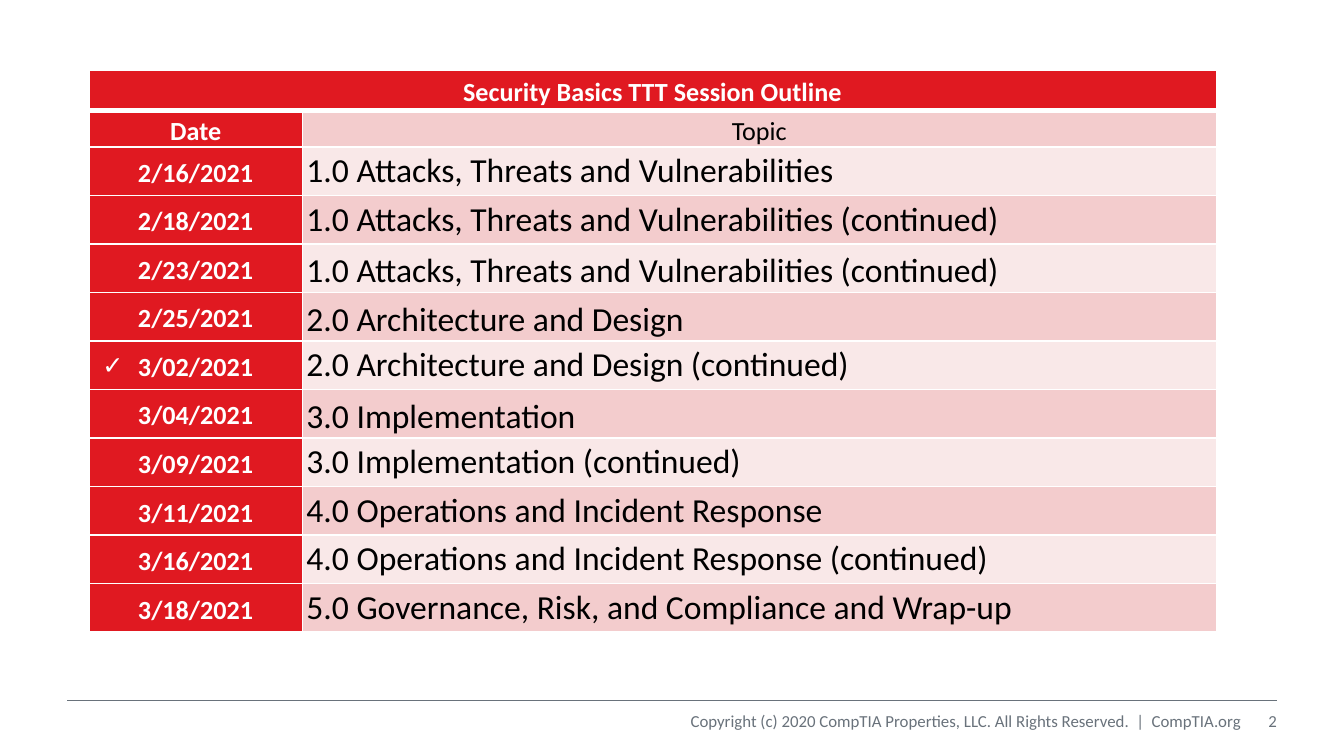
from lxml import etree
from pptx import Presentation
from pptx.dml.color import RGBColor
from pptx.enum.shapes import MSO_CONNECTOR
from pptx.enum.text import MSO_ANCHOR, PP_ALIGN
from pptx.oxml.ns import qn
from pptx.util import Pt

LINE = MSO_CONNECTOR.STRAIGHT
MID, TOP = MSO_ANCHOR.MIDDLE, MSO_ANCHOR.TOP
LEFT, CENTER, RIGHT = PP_ALIGN.LEFT, PP_ALIGN.CENTER, PP_ALIGN.RIGHT
FONT = "Calibri"
COLORS = {"red": "E01921", "rose": "F3CCCD", "pale": "F9E8E8",
          "white": "FFFFFF", "black": "000000", "gray": "69727B"}

# Date, topic, line spacing of the topic
ROWS = [
    ("2/16/2021", "1.0 Attacks, Threats and Vulnerabilities", 1),
    ("2/18/2021", "1.0 Attacks, Threats and Vulnerabilities (continued)", 1),
    ("2/23/2021", "1.0 Attacks, Threats and Vulnerabilities (continued)", 1.15),
    ("2/25/2021", "2.0 Architecture and Design", 1.15),
    ("3/02/2021", "2.0 Architecture and Design (continued)", 1),
    ("3/04/2021", "3.0 Implementation", 1.15),
    ("3/09/2021", "3.0 Implementation (continued)", 1),
    ("3/11/2021", "4.0 Operations and Incident Response", 1),
    ("3/16/2021", "4.0 Operations and Incident Response (continued)", 1),
    ("3/18/2021", "5.0 Governance, Risk, and Compliance and Wrap-up", 1),
]


def rgb(name):
    return RGBColor.from_string(COLORS[name])


def put_text(frame, text, size=14, color="black", bold=False, align=LEFT,
             space=1):
    para = frame.paragraphs[0]
    para.alignment = align
    para.line_spacing = space
    run = para.add_run()
    run.text = text
    font = run.font
    font.name, font.size, font.bold = FONT, Pt(size), bold
    font.color.rgb = rgb(color)


def add_label(slide, text, box, pads, anchor=MID, wrap=True, **form):
    frame = slide.shapes.add_textbox(*map(Pt, box)).text_frame
    frame.margin_left, frame.margin_top, frame.margin_right, \
        frame.margin_bottom = map(Pt, pads)
    frame.vertical_anchor = anchor
    frame.word_wrap = wrap
    put_text(frame, text, **form)


def add_rule(slide, left, right, y):
    rule = slide.shapes.add_connector(LINE, Pt(left), Pt(y), Pt(right), Pt(y))
    rule.line.color.rgb = rgb("gray")
    rule.line.width = Pt(1)
    etree.SubElement(rule._element.spPr, qn("a:effectLst"))


def set_edges(cell, top=1, bottom=1):
    props = cell._tc.get_or_add_tcPr()
    for side, width in zip("LRTB", (1, 1, top, bottom)):
        edge = etree.SubElement(props, qn("a:ln" + side), w=str(Pt(width)))
        fill = etree.SubElement(edge, qn("a:solidFill"))
        etree.SubElement(fill, qn("a:srgbClr"), val=COLORS["white"])


def fill_cell(cell, text, fill, top=1, bottom=1, **form):
    set_edges(cell, top, bottom)
    cell.fill.solid()
    cell.fill.fore_color.rgb = rgb(fill)
    cell.vertical_anchor = MID
    cell.margin_left = cell.margin_right = Pt(2.2)
    cell.margin_top = cell.margin_bottom = 0
    put_text(cell.text_frame, text, **form)


def add_plan(slide):
    widths = (114.3, 489.6)
    heights = [21.6, 17.6] + [26] * len(ROWS)
    box = (47.7, 37.7, sum(widths), sum(heights))
    table = slide.shapes.add_table(len(heights), len(widths),
                                   *map(Pt, box)).table
    for col, width in zip(table.columns, widths):
        col.width = Pt(width)
    for row, height in zip(table.rows, heights):
        row.height = Pt(height)

    # Heading rows
    head = {"color": "white", "bold": True, "align": CENTER, "space": 1.15}
    table.cell(0, 0).merge(table.cell(0, 1))
    fill_cell(table.cell(0, 0), "Security Basics TTT Session Outline", "red",
              bottom=3, **head)
    set_edges(table.cell(0, 1), bottom=3)
    fill_cell(table.cell(1, 0), "Date", "red", top=3, **head)
    fill_cell(table.cell(1, 1), "Topic", "rose", top=3, align=CENTER,
              space=1.15)

    # Sessions
    for i, (date, topic, space) in enumerate(ROWS, 2):
        fill_cell(table.cell(i, 0), date, "red", **head)
        fill_cell(table.cell(i, 1), topic, "rose" if i % 2 else "pale",
                  size=18, space=space)


def main():
    deck = Presentation()
    deck.slide_width, deck.slide_height = Pt(720), Pt(405)
    slide = deck.slides.add_slide(deck.slide_layouts[6])

    # Footer
    add_rule(slide, 36, 684, 375.3)
    foot = {"size": 9, "color": "gray", "align": RIGHT}
    add_label(slide, "Copyright (c) 2020 CompTIA Properties, LLC. "
              "All Rights Reserved. \u00a0|\u00a0 CompTIA.org".replace("\u00a0", " "),
              (270.7, 375.3, 393.8, 21.6), (0, 3.6, 0, 3.6), **foot)
    add_label(slide, "2", (664.5, 375.3, 19.5, 21.6), (7.2, 3.6, 0, 3.6),
              **foot)

    # Session table and mark of the current row
    add_plan(slide)
    add_label(slide, "✓", (47.7, 183.6, 25.2, 23.8), (7.2, 3.6, 7.2, 3.6),
              anchor=TOP, wrap=False, size=13.5, color="white")

    deck.save("out.pptx")


if __name__ == "__main__":
    main()
